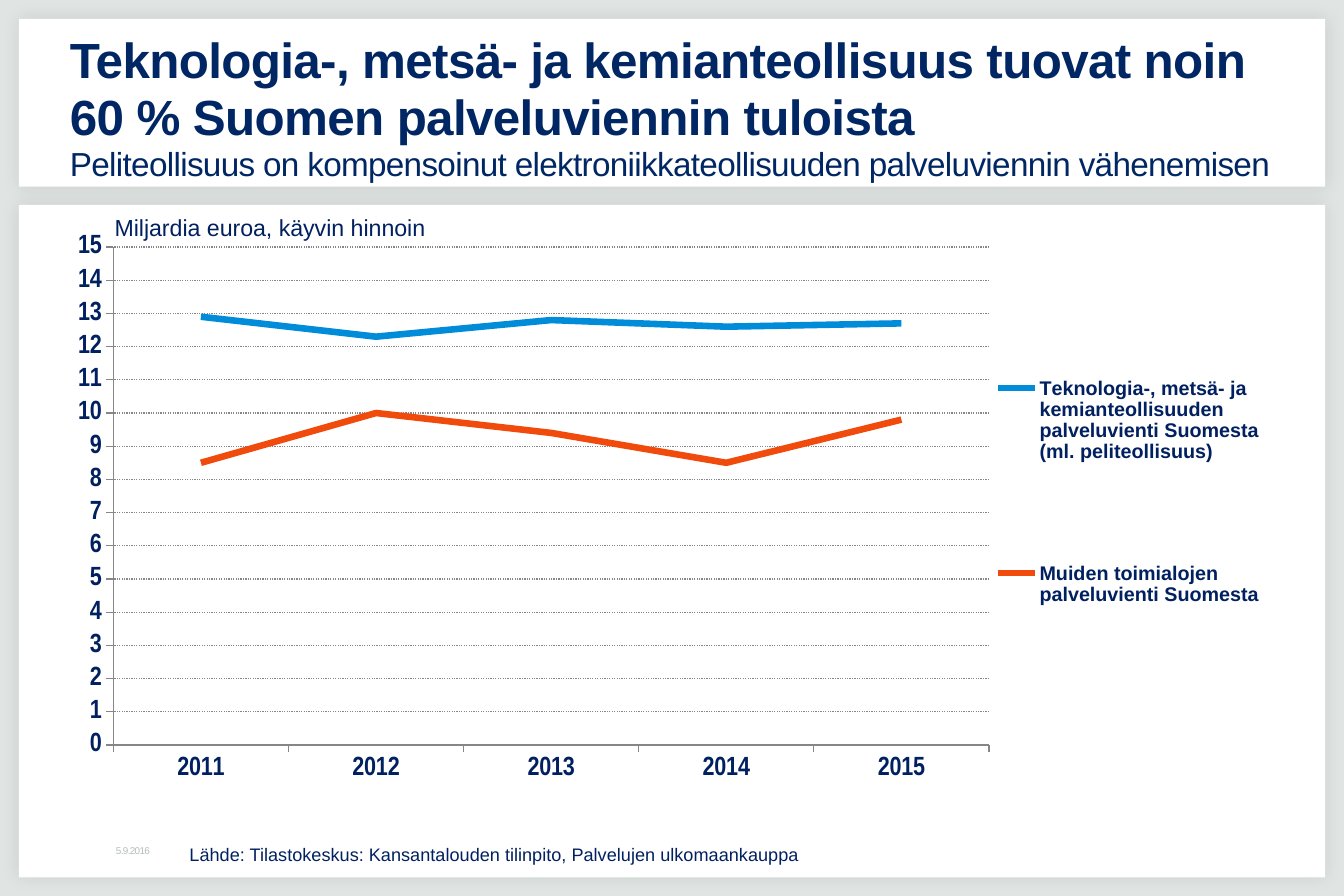
import pptx
import pptx.chart.data
import pptx.dml.color
import pptx.enum.chart
import pptx.enum.dml
import pptx.enum.shapes
import pptx.enum.text
import pptx.oxml
import pptx.oxml.ns
import pptx.util

Pt = pptx.util.Pt
qn = pptx.oxml.ns.qn

COLORS = {
    "background": "E0E5E3",
    "panel": "FFFFFF",
    "title": "002664",
    "text": "002060",
    "date": "B1BEB9",
    "axis": "868686",
    "technology": "008CD9",
    "others": "F04B0D",
}
YEARS = ["2011", "2012", "2013", "2014", "2015"]
EXPORTS = [
    ("Teknologia-, metsä- ja kemianteollisuuden palveluvienti Suomesta "
     "(ml. peliteollisuus)", "technology", [12.9, 12.3, 12.8, 12.6, 12.7]),
    ("Muiden toimialojen palveluvienti Suomesta", "others",
     [8.5, 10, 9.4, 8.5, 9.8]),
]


def set_layout(element, index, mode, x, y, width, height):
    """Place a chart part by fractions of the chart's size."""
    for old in element.findall(qn("c:layout")):
        element.remove(old)
    target = '<c:layoutTarget val="inner"/>' if mode == "inner" else ""
    element.insert(index, pptx.oxml.parse_xml(
        f'<c:layout {pptx.oxml.ns.nsdecls("c")}><c:manualLayout>{target}'
        '<c:xMode val="edge"/><c:yMode val="edge"/>'
        f'<c:x val="{x}"/><c:y val="{y}"/><c:w val="{width}"/><c:h val="{height}"/>'
        '</c:manualLayout></c:layout>'))


class Slide:
    def __init__(self, page, font):
        self.page = page
        self.font = font

    def color(self, name):
        return pptx.dml.color.RGBColor.from_string(COLORS[name])

    def style(self, font, size, color, bold=False, name=None):
        font.name = name or self.font
        font.size = Pt(size)
        font.bold = bold
        font.color.rgb = self.color(color)

    def line(self, line, color, width):
        line.color.rgb = self.color(color)
        line.width = Pt(width)

    def background(self, color):
        fill = self.page.background.fill
        fill.solid()
        fill.fore_color.rgb = self.color(color)

    def panel(self, left, top, width, height):
        """Add a white panel with a soft shadow around it."""
        panel = self.page.shapes.add_shape(
            pptx.enum.shapes.MSO_SHAPE.RECTANGLE,
            Pt(left), Pt(top), Pt(width), Pt(height))
        panel.fill.solid()
        panel.fill.fore_color.rgb = self.color("panel")
        panel.line.fill.background()
        panel.shadow.inherit = False
        effects = panel._element.spPr.find(qn("a:effectLst"))
        effects.append(pptx.oxml.parse_xml(
            f'<a:outerShdw {pptx.oxml.ns.nsdecls("a")} blurRad="127000" dist="0" '
            'dir="2700000" rotWithShape="0"><a:srgbClr val="000000">'
            '<a:alpha val="10000"/></a:srgbClr></a:outerShdw>'))

    def text(self, left, top, width, height, lines, color, insets=(7.2, 3.6),
             spacing=None, tracking=0):
        """Add a text box; each line is (text, size, bold)."""
        box = self.page.shapes.add_textbox(
            Pt(left), Pt(top), Pt(width), Pt(height))
        frame = box.text_frame
        frame.word_wrap = True
        frame.vertical_anchor = pptx.enum.text.MSO_ANCHOR.TOP
        frame.margin_left = frame.margin_right = Pt(insets[0])
        frame.margin_top = frame.margin_bottom = Pt(insets[1])
        for index, (words, size, bold) in enumerate(lines):
            para = frame.add_paragraph() if index else frame.paragraphs[0]
            if spacing:
                para.line_spacing = spacing
            span = para.add_run()
            span.text = words
            self.style(span.font, size, color, bold)
            if tracking:
                span._r.get_or_add_rPr().set("spc", str(round(tracking * 100)))

    def line_chart(self, left, top, width, height, categories, series):
        data = pptx.chart.data.CategoryChartData()
        data.categories = categories
        for name, _, values in series:
            data.add_series(name, values)
        chart = self.page.shapes.add_chart(
            pptx.enum.chart.XL_CHART_TYPE.LINE,
            Pt(left), Pt(top), Pt(width), Pt(height), data).chart
        chart.has_title = False
        self.style(chart.font, 10, "text", name="Arial Narrow")
        chart.plots[0].vary_by_categories = False
        for drawn, (_, color, _) in zip(chart.plots[0].series, series):
            drawn.smooth = False
            self.line(drawn.format.line, color, 4)

        for axis in (chart.category_axis, chart.value_axis):
            self.style(axis.tick_labels.font, 16, "text", True, "Arial Narrow")
            self.line(axis.format.line, "axis", 0.75)
            axis.major_tick_mark = pptx.enum.chart.XL_TICK_MARK.OUTSIDE
        scale = chart.value_axis
        scale.minimum_scale, scale.maximum_scale, scale.major_unit = 0, 15, 1
        grid = scale.major_gridlines.format.line
        self.line(grid, "axis", 0.75)
        grid.dash_style = pptx.enum.dml.MSO_LINE.ROUND_DOT

        chart.has_legend = True
        legend = chart.legend
        legend.position = pptx.enum.chart.XL_LEGEND_POSITION.RIGHT
        legend.include_in_layout = False
        self.style(legend.font, 12, "text", True)
        plot_area = chart._chartSpace.chart.plotArea
        set_layout(plot_area, 0, "inner", 0.055, 0.039, 0.716, 0.837)
        set_layout(legend._element, 1, "outer", 0.77, 0.09, 0.23, 0.72)


def main():
    deck = pptx.Presentation()
    deck.slide_width, deck.slide_height = Pt(816.48), Pt(544.32)
    slide = Slide(deck.slides.add_slide(deck.slide_layouts[6]), "Arial")
    slide.background("background")
    slide.panel(11.5, 11.5, 793.5, 102)
    slide.panel(11.5, 124.5, 793.5, 408.5)
    slide.line_chart(28, 136, 743, 361.5, YEARS, EXPORTS)
    slide.text(39.5, 20.5, 745, 92, [
        ("Teknologia-, metsä- ja kemianteollisuus tuovat noin 60 % "
         "Suomen palveluviennin tuloista", 30, True),
        ("Peliteollisuus on kompensoinut elektroniikkateollisuuden "
         "palveluviennin vähenemisen", 20.2, False),
    ], "title", insets=(3, 0), spacing=0.95, tracking=-0.4)
    slide.text(108, 508.5, 434, 21, [
        ("Lähde: Tilastokeskus: Kansantalouden tilinpito, "
         "Palvelujen ulkomaankauppa", 11, False)], "text")
    slide.text(62.5, 126, 566, 24.5,
               [("Miljardia euroa, käyvin hinnoin", 14.1, False)], "text")
    slide.text(67.5, 510, 102, 12, [("5.9.2016", 6, False)], "date",
               insets=(3, 3), tracking=-0.4)
    deck.save("out.pptx")


if __name__ == "__main__":
    main()
